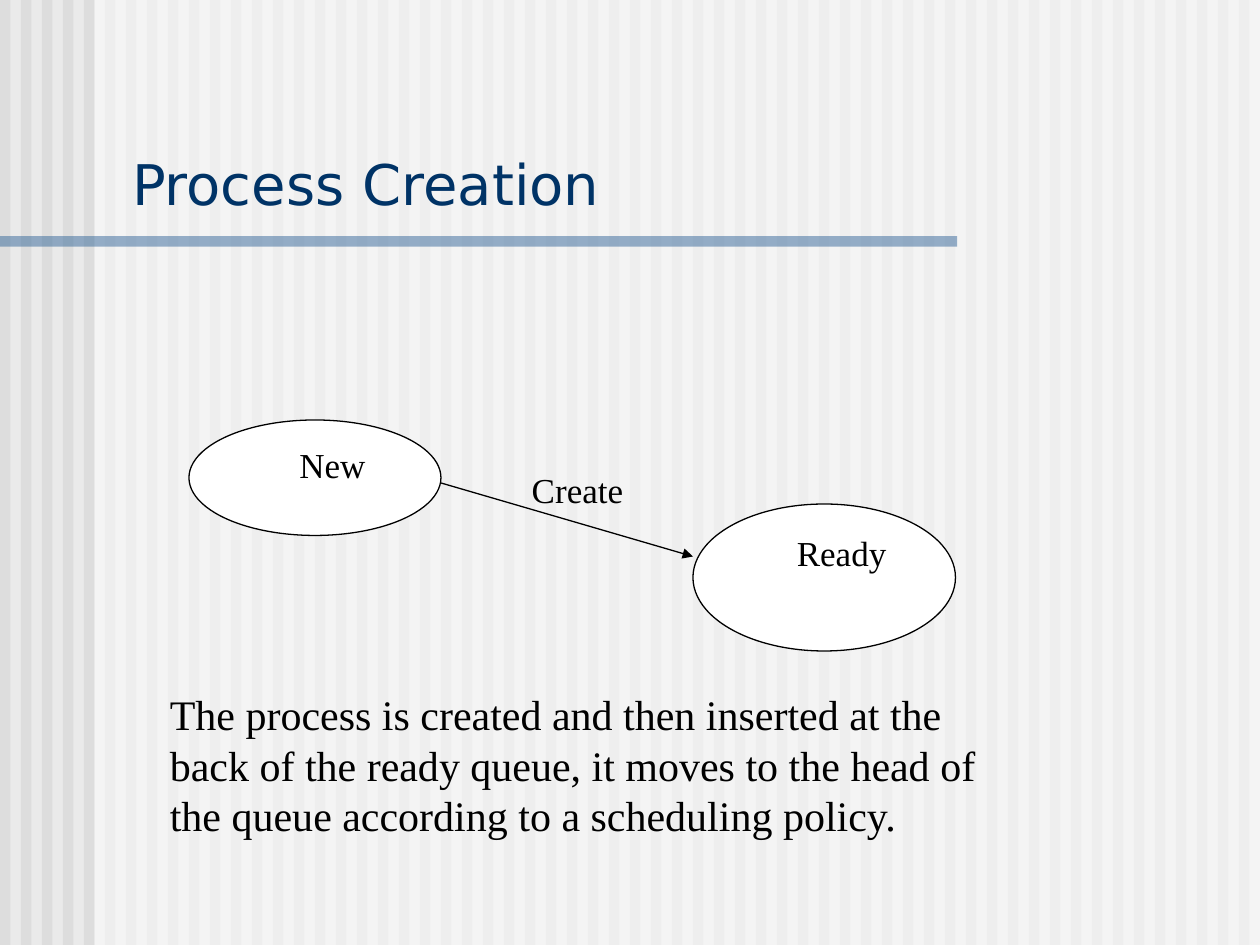
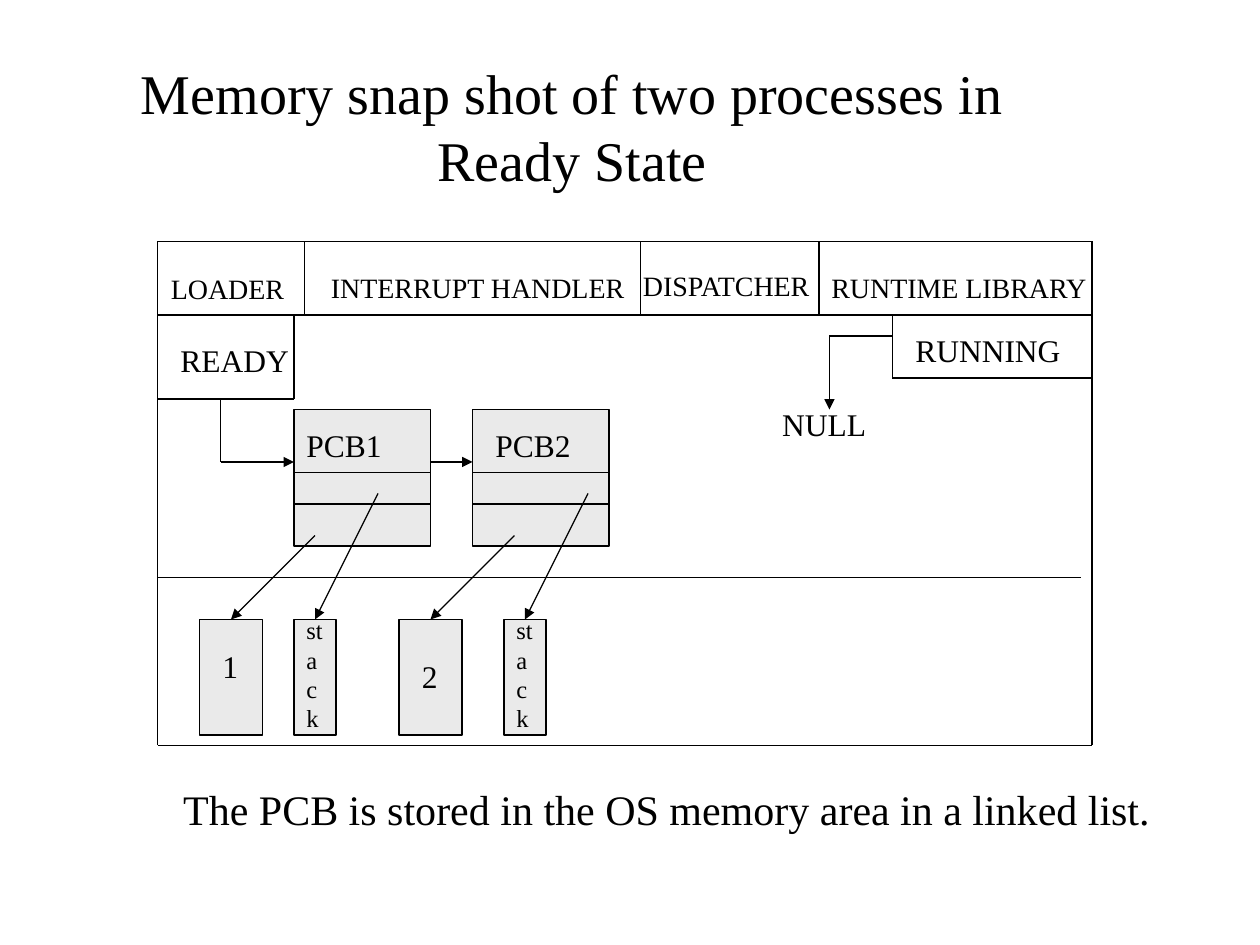
"""Build two slides on process creation and the ready queue."""
from lxml import etree
from pptx import Presentation
from pptx.dml.color import RGBColor as RGB
from pptx.enum.shapes import MSO_CONNECTOR as LINK, MSO_SHAPE as KIND
from pptx.enum.text import MSO_ANCHOR as ANCHOR, PP_ALIGN as ALIGN
from pptx.oxml.ns import qn
from pptx.util import Pt

HUES = {"ink": "000000", "paper": "FFFFFF", "gray": "EAEAEA",
        "stripe": "DDDDDD", "bar": "336699", "title": "003366"}
SERIF, SANS = "Times New Roman", "DejaVu Sans"
LEFT, MID = ALIGN.LEFT, ALIGN.CENTER


def form(slide, kind, box, fill, edge=None):
    """Add a filled shape, with a thin outline if edge is given."""
    shape = slide.shapes.add_shape(kind, *map(Pt, box))
    shape.shadow.inherit = False
    shape.fill.solid()
    shape.fill.fore_color.rgb = RGB.from_string(HUES[fill])
    if edge:
        shape.line.color.rgb = RGB.from_string(HUES[edge])
        shape.line.width = Pt(0.75)
    else:
        shape.line.fill.background()
    return shape


def write(shape, text, size, align=LEFT, face=SERIF, hue="ink"):
    """Fill a shape or text box with one top-anchored paragraph."""
    frame = shape.text_frame
    frame.word_wrap = True
    frame.vertical_anchor = ANCHOR.TOP
    frame.text = text
    para = frame.paragraphs[0]
    para.alignment = align
    font = para.runs[0].font
    font.size, font.name = Pt(size), face
    font.color.rgb = RGB.from_string(HUES[hue])
    return frame


deck = Presentation()
deck.slide_width, deck.slide_height = Pt(720), Pt(540)
birth, memory = [deck.slides.add_slide(deck.slide_layouts[6]) for _ in range(2)]
for slide, hue in ((birth, "gray"), (memory, "paper")):
    slide.background.fill.solid()
    slide.background.fill.fore_color.rgb = RGB.from_string(HUES[hue])

for left in range(0, 720, 12):
    form(birth, KIND.RECTANGLE, (left, 0, 6, 540), "stripe")
for box, hue in (((54, 0, 666, 540), "paper"), ((0, 135, 547, 6), "bar")):
    veil = form(birth, KIND.RECTANGLE, box, hue)
    color = veil.fill._xPr.find(".//" + qn("a:srgbClr"))
    etree.SubElement(color, qn("a:alpha"), val="50000")

head = birth.shapes.add_textbox(Pt(68.4), Pt(82), Pt(643), Pt(45.4))
write(head, "Process Creation", 32, LEFT, SANS, "title").vertical_anchor = ANCHOR.BOTTOM

for text, box in (("New", (108, 240, 144, 66)), ("Ready", (396, 288, 150, 84))):
    state = form(birth, KIND.OVAL, box, "paper", "ink")
    write(state, text, 20, MID).margin_left = Pt(27)

lines = [(birth, 252, 276, 396, 318, True)]
texts = [
    (birth, "The process is created and then inserted at the back of the ready queue, "
     "it moves to the head of the queue according to a scheduling policy.",
     24, LEFT, (90, 390, 498, 94)),
    (birth, "Create", 20, MID, (288, 264, 84, 32)),
    (memory, "Memory snap shot of two processes in Ready State",
     32, MID, (60, 30, 534, 84)),
    (memory, "LOADER", 16, MID, (82, 151.8, 96, 27)),
    (memory, "INTERRUPT HANDLER", 16, MID, (165, 151.1, 216, 27)),
    (memory, "DISPATCHER", 16, MID, (352, 150, 126, 27)),
    (memory, "RUNTIME LIBRARY", 16, LEFT, (468, 151.1, 168, 27)),
    (memory, "READY", 18, LEFT, (96, 191.4, 96, 29)),
    (memory, "RUNNING", 18, LEFT, (516, 185.4, 102, 29)),
    (memory, "NULL", 18, MID, (426, 228, 90, 29)),
    (memory, "The PCB is stored in the OS memory area in a linked list.",
     24, MID, (90, 444, 582, 36)),
]

for top in (138, 180, 426):
    lines.append((memory, 90, top, 624, top, False))
for left in (90, 624):
    lines.append((memory, left, 138, left, 426, False))
for left in (174, 366, 468):
    lines.append((memory, left, 138, left, 180, False))
lines += [(memory, *ends) for ends in (
    (90, 330, 618, 330, False),
    (90, 228, 168, 228, False),
    (168, 180, 168, 228, False),
    (126, 228, 126, 264, False),
    (126, 264, 168, 264, True),
    (510, 180, 510, 216, False),
    (510, 216, 624, 216, False),
    (510, 192, 474, 192, False),
    (474, 192, 474, 234, True),
    (246, 264, 270, 264, True),
)]

for num, left, name, code, stack, low, pin, tip in (
        (1, 168, 168, 114, 168, 366, (180, 216), (132, 180)),
        (2, 270, 276, 228, 288, 372, (294, 336), (246, 300))):
    for box in ((left, 234, 78, 78), (code, 354, 36, 66), (stack, 354, 24, 66)):
        form(memory, KIND.RECTANGLE, box, "gray", "ink")
    for top in (270, 288):
        lines.append((memory, left, top, left + 78, top, False))
    for start, top, end in zip(pin, (306, 282), tip):
        lines.append((memory, start, top, end, 354, True))
    texts += [(memory, f"PCB{num}", 18, LEFT, (name, 240, 72, 29)),
              (memory, str(num), 18, LEFT, (code + 6, low, 24, 29)),
              (memory, "stack", 14, LEFT, (stack, 348, 24, 74))]

for slide, x1, y1, x2, y2, arrow in lines:
    link = slide.shapes.add_connector(LINK.STRAIGHT, *map(Pt, (x1, y1, x2, y2)))
    link.line.color.rgb = RGB.from_string(HUES["ink"])
    link.line.width = Pt(0.75)
    if arrow:
        etree.SubElement(link.line._get_or_add_ln(), qn("a:tailEnd"), type="triangle")
    etree.SubElement(link._element.spPr, qn("a:effectLst"))

for slide, text, size, align, box in texts:
    write(slide.shapes.add_textbox(*map(Pt, box)), text, size, align)

deck.save("out.pptx")
